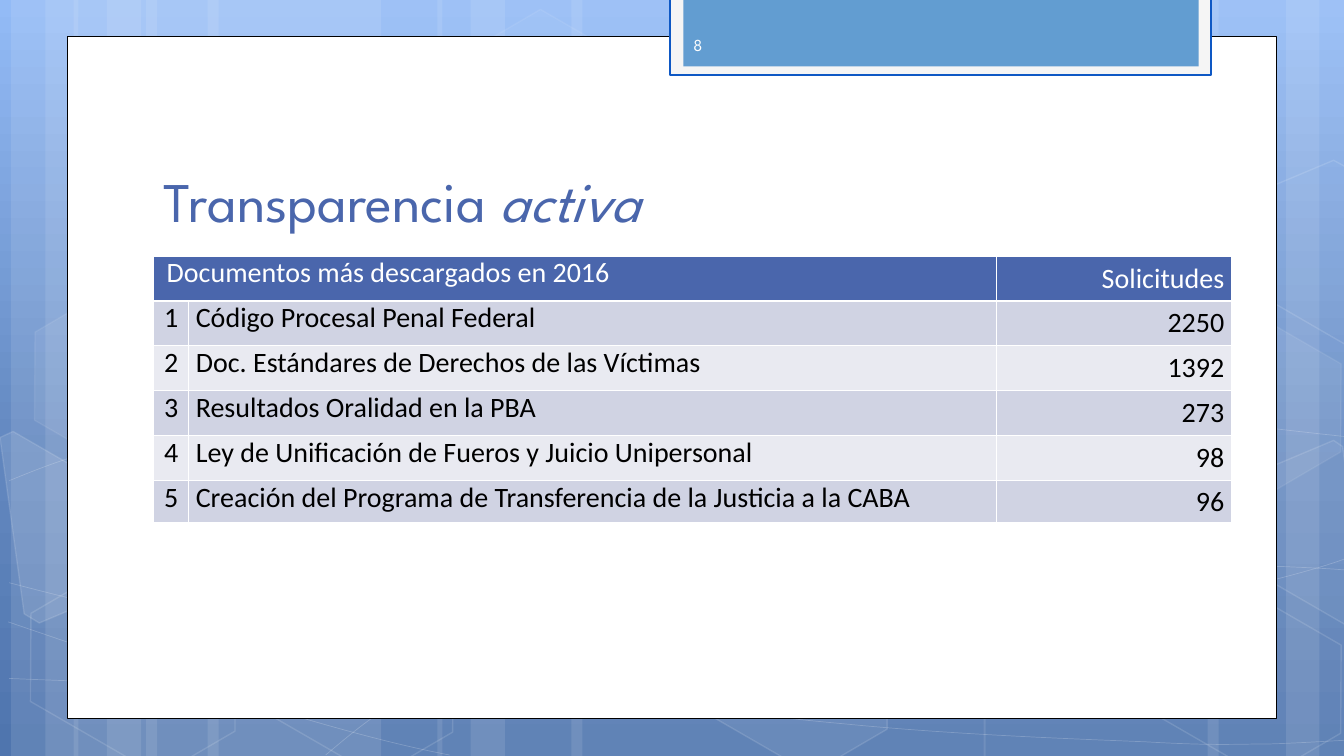
from copy import deepcopy
from dataclasses import dataclass

from lxml.etree import SubElement
from pptx import Presentation
from pptx.dml.color import RGBColor
from pptx.enum.shapes import MSO_SHAPE
from pptx.enum.text import MSO_ANCHOR, MSO_AUTO_SIZE, PP_ALIGN
from pptx.oxml.ns import qn
from pptx.util import Pt


@dataclass(frozen=True)
class Theme:
    white: str = "FFFFFF"
    black: str = "000000"
    accent: str = "4A66AC"
    panel_tab: str = "F5F5F5"
    tab_line: str = "0E58C4"
    tab_fill: str = "629DD1"
    page_number: str = "FEFEFE"
    row_fills: tuple = ("E9EAF1", "D0D3E3")
    sky: tuple = ((0, "93BBF6"), (0.62, "6186BE"), (1, "4F75AE"))
    heading_font: str = "League Spartan"
    table_font: str = "Calibri"
    title_size: int = 40
    table_size: int = 20
    number_size: int = 12


THEME = Theme()


def paint(shape, fill=None, fill_alpha=100, line=None, width=1, line_alpha=100):
    """Set fill and outline; the alphas are opacity in percent, None means no paint."""
    shape.shadow.inherit = False
    if line:
        shape.line.width = Pt(width)
    for paint_format, color, alpha, xpath in (
        (shape.fill, fill, fill_alpha, "a:solidFill/a:srgbClr"),
        (shape.line.fill, line, line_alpha, "a:ln/a:solidFill/a:srgbClr"),
    ):
        if color is None:
            paint_format.background()
            continue
        paint_format.solid()
        paint_format.fore_color.rgb = RGBColor.from_string(color)
        if alpha < 100:
            rgb = shape.element.spPr.xpath(xpath)[0]
            SubElement(rgb, qn("a:alpha"), val=str(alpha * 1000))


def format_font(font, color, **values):
    font.color.rgb = RGBColor.from_string(color)
    for name, value in values.items():
        setattr(font, name, value)


prs = Presentation()
prs.slide_width, prs.slide_height = Pt(960), Pt(540)
slide = prs.slides.add_slide(prs.slide_layouts[5])
shapes = slide.shapes

# Background gradient
sky = slide.background.fill
sky.gradient()
sky.gradient_angle = 270
gradient_list = slide.element.xpath(".//p:bg//a:gsLst")[0]
gradient_list.insert(1, deepcopy(gradient_list[0]))
for stop, (position, color) in zip(sky.gradient_stops, THEME.sky):
    stop.position = position
    stop.color.rgb = RGBColor.from_string(color)

# Translucent vertical bands: left, width
BANDS = [
    (104.4, 167.8), (7.9, 48.2), (32.4, 79.9), (148.3, 167.8), (52.6, 48.2), (76.3, 79.9),
    (702.7, 167.8), (918.7, 48.2), (862.6, 79.9), (408.2, 295.9), (312.5, 48.2), (336.2, 79.9),
]
for left, width in BANDS:
    band = shapes.add_shape(MSO_SHAPE.RECTANGLE, Pt(left), Pt(0), Pt(width), Pt(540))
    paint(band, THEME.white, 10)

# Fine waves: a start point, then two control points and an end point per Bézier segment
WAVES = [
    [(6.5, 484.6), (59, 486.7), (110.9, 488.9), (182.9, 488.2), (254.9, 487.4), (343.4, 486),
     (439.2, 478.8), (535.7, 471.6), (671.8, 457.9), (760.3, 444.2), (848.2, 430.6),
     (938.2, 409), (967, 396.7)],
    [(6.5, 343.4), (34.6, 331.9), (61.9, 321.1), (116.6, 310.3), (171.4, 299.5), (248.4, 283.7),
     (333.4, 278.6), (419, 273.6), (522, 272.9), (627.8, 278.6), (733.7, 284.4),
     (909.4, 306.7), (967, 312.5)],
    [(5.8, 444.2), (121.7, 483.8), (237.6, 523.4), (321.1, 539.3)],
    [(6.5, 416.2), (36.7, 424.1), (67, 432), (123.1, 443.5), (178.6, 454.3), (262.1, 472.3),
     (342, 484.6), (422.6, 496.8), (523.4, 509.8), (602.6, 517), (682.6, 524.9),
     (768.2, 527.8), (818.6, 529.9), (869, 532.8), (882.7, 531.4), (907.2, 531.4),
     (931.7, 530.6), (949.7, 529.2), (967, 528.5)],
    [(232.6, 539.3), (249.8, 524.9), (266.4, 510.5), (290.2, 497.5), (313.2, 483.8),
     (345.6, 470.2), (372.2, 460.1), (398.9, 450), (415.4, 445.7), (450.7, 438.5),
     (486, 431.3), (550.8, 421.2), (583.9, 416.2), (617.8, 411.1), (622.8, 411.1),
     (653, 409.7), (682.6, 407.5), (729.4, 405.4), (762.5, 404.6), (795.6, 403.9),
     (851, 404.6), (851, 404.6), (872, 404.6), (893, 404.6), (914.4, 404.6),
     (932.4, 405.4), (948.2, 406.1), (956.9, 406.8), (965.5, 407.5), (962.6, 407.1),
     (965.5, 407.5)],
]
for (start_x, start_y), *controls in WAVES:
    builder = shapes.build_freeform(Pt(start_x), Pt(start_y))
    builder.add_line_segments([(Pt(x), Pt(y)) for x, y in controls], close=False)
    wave = builder.convert_to_shape()
    outline = wave.element.xpath(".//a:pathLst/a:path")[0]
    segments = outline.findall(qn("a:lnTo"))
    for first in range(0, len(segments), 3):
        bezier = SubElement(outline, qn("a:cubicBezTo"))
        for segment in segments[first:first + 3]:
            bezier.append(segment[0])
            outline.remove(segment)
    paint(wave, line=THEME.white, width=0.5, line_alpha=20)

# Hexagons: left, top, fill opacity, line opacity
HEXAGONS = [
    (320.4, 25.9, 4, 8), (476.6, 424.1, 6, 12), (10.8, 425.5, 0, 12), (13.7, 224.6, 7, 8),
    (166.3, 426.2, 0, 12), (800.6, 427, 0, 12), (800.6, 226.1, 7, 8),
]
for left, top, fill_alpha, line_alpha in HEXAGONS:
    hexagon = shapes.add_shape(MSO_SHAPE.HEXAGON, Pt(left), Pt(top), Pt(168.3), Pt(109.4))
    hexagon.rotation = 30
    hexagon.adjustments[0] = 0.285
    paint(hexagon, THEME.white if fill_alpha else None, fill_alpha, THEME.white, 1, line_alpha)

# Hexagons cut by the slide edge: fill opacity, corners
CUT_HEXAGONS = [
    (10, [(0, 312.5), (9.4, 308.2), (82.8, 350.6), (91.4, 418.3), (28.1, 445), (17.3, 438.5)]),
    (4, [(889.2, 341.3), (952.6, 314.6), (959, 319), (977, 450), (971.3, 452.2), (897.8, 409.7)]),
    (0, [(889.2, 141.1), (952.6, 114.5), (960.5, 118.8), (977, 249.1), (971.3, 252), (897.8, 209.5)]),
]
for fill_alpha, corners in CUT_HEXAGONS:
    (first_x, first_y), *others = corners
    builder = shapes.build_freeform(Pt(first_x), Pt(first_y))
    builder.add_line_segments([(Pt(x), Pt(y)) for x, y in others], close=True)
    paint(builder.convert_to_shape(), THEME.white if fill_alpha else None, fill_alpha,
          THEME.white, 1, 12)

# White page and the tab hanging from the top edge
for left, top, width, height, fill, line, line_width in (
    (48.2, 25.9, 863.6, 487.4, THEME.white, THEME.black, 0.5),
    (478.8, -1.4, 386.2, 55, THEME.panel_tab, THEME.tab_line, 1.25),
    (488.2, -1.4, 367.9, 48.8, THEME.tab_fill, None, 0),
):
    panel = shapes.add_shape(MSO_SHAPE.RECTANGLE, Pt(left), Pt(top), Pt(width), Pt(height))
    paint(panel, fill, line=line, width=line_width)

# Title, brought in front of the page
title = shapes.title
title.element.getparent().append(title.element)
title.left, title.top, title.width, title.height = Pt(109.4), Pt(80.6), Pt(737.3), Pt(90)
title.text_frame.auto_size = MSO_AUTO_SIZE.NONE
title.text_frame.vertical_anchor = MSO_ANCHOR.BOTTOM
heading = title.text_frame.paragraphs[0]
heading.alignment = PP_ALIGN.LEFT
for words, italic in (("Transparencia ", False), ("activa", True)):
    run = heading.add_run()
    run.text = words
    format_font(run.font, THEME.accent, name=THEME.heading_font,
                size=Pt(THEME.title_size), italic=italic)

# Most downloaded documents; the table style draws the white rules
DOWNLOADS = [
    ("Documentos más descargados en 2016", "", "Solicitudes"),
    ("1", "Código Procesal Penal Federal", "2250"),
    ("2", "Doc. Estándares de Derechos de las Víctimas", "1392"),
    ("3", "Resultados Oralidad en la PBA", "273"),
    ("4", "Ley de Unificación de Fueros y Juicio Unipersonal", "98"),
    ("5", "Creación del Programa de Transferencia de la Justicia a la CABA", "96"),
]
ALIGNMENTS = (PP_ALIGN.CENTER, PP_ALIGN.LEFT, PP_ALIGN.RIGHT)
downloads = shapes.add_table(6, 3, Pt(109.6), Pt(182.9), Pt(770), Pt(190.5)).table
for column, width in zip(downloads.columns, (25.3, 576.9, 167.8)):
    column.width = Pt(width)
for row, height in zip(downloads.rows, (32.1,) * 5 + (30,)):
    row.height = Pt(height)
downloads.cell(0, 0).merge(downloads.cell(0, 1))

for r, record in enumerate(DOWNLOADS):
    for c, words in enumerate(record):
        cell = downloads.cell(r, c)
        heading_cell = r == 0 and c == 0
        for name, value in {
            "margin_left": Pt(9.5 if heading_cell else 5), "margin_right": Pt(5),
            "margin_top": 0, "margin_bottom": 0,
            "vertical_anchor": MSO_ANCHOR.MIDDLE if c == 2 else MSO_ANCHOR.TOP,
        }.items():
            setattr(cell, name, value)
        cell.fill.solid()
        cell.fill.fore_color.rgb = RGBColor.from_string(
            THEME.row_fills[r % 2] if r else THEME.accent)
        if words:
            entry = cell.text_frame.paragraphs[0]
            entry.alignment = PP_ALIGN.LEFT if heading_cell else ALIGNMENTS[c]
            run = entry.add_run()
            run.text = words
            format_font(run.font, THEME.black if r else THEME.white, name=THEME.table_font,
                        size=Pt(THEME.table_size), bold=False)

# Page number in the tab
page_number = shapes.add_textbox(Pt(488.2), Pt(17.3), Pt(139.7), Pt(28.8)).text_frame
page_number.word_wrap = True
page_number.vertical_anchor = MSO_ANCHOR.MIDDLE
run = page_number.paragraphs[0].add_run()
run.text = "8"
format_font(run.font, THEME.page_number, name=THEME.heading_font, size=Pt(THEME.number_size))

prs.save("out.pptx")
